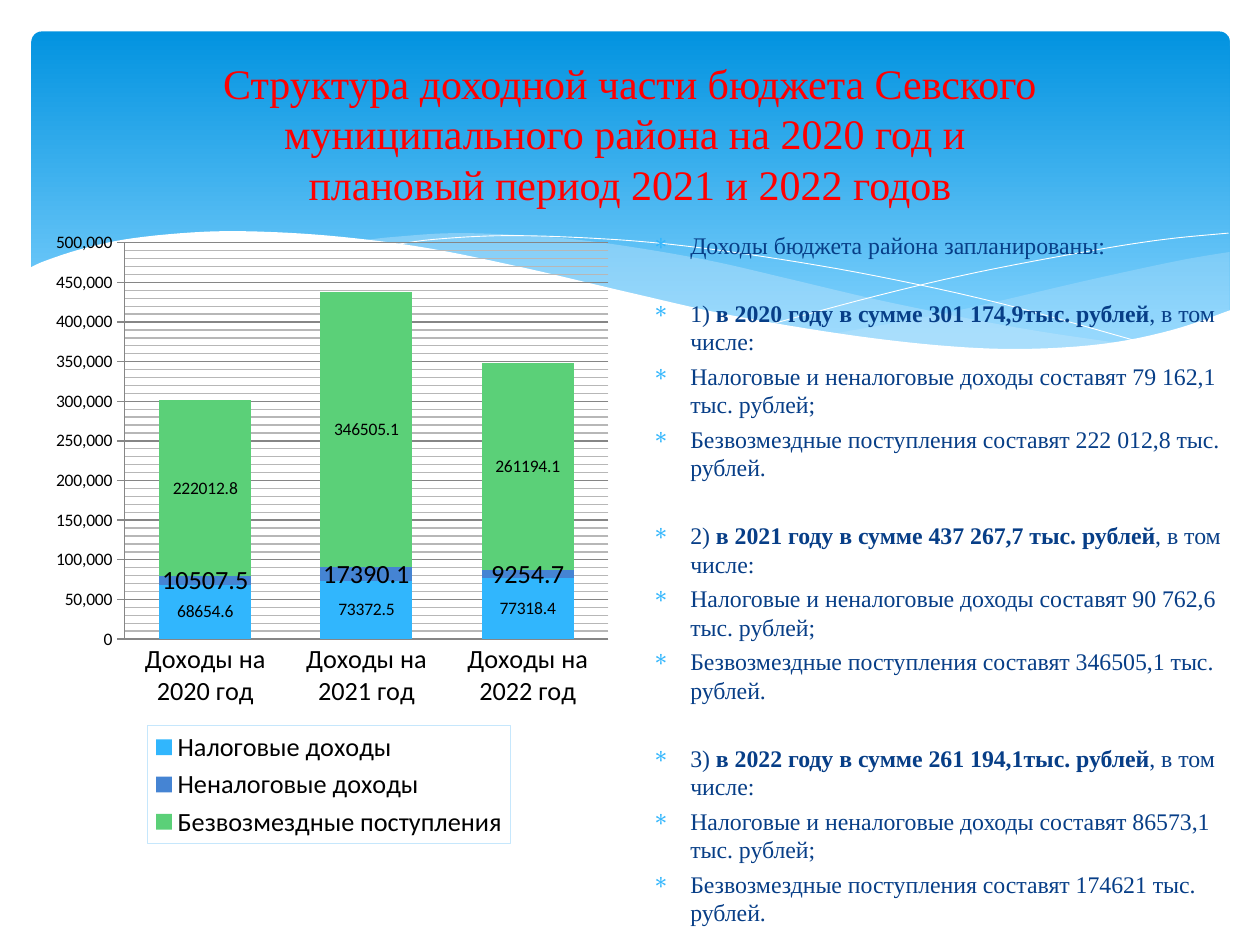
from lxml import etree
from pptx import Presentation
from pptx.chart.data import CategoryChartData
from pptx.dml.color import RGBColor
from pptx.enum.chart import XL_CHART_TYPE, XL_LEGEND_POSITION, XL_TICK_MARK
from pptx.enum.shapes import MSO_SHAPE
from pptx.enum.text import MSO_ANCHOR, PP_ALIGN
from pptx.oxml import parse_xml
from pptx.oxml.ns import nsdecls, qn
from pptx.util import Inches, Pt

STACKED = XL_CHART_TYPE.COLUMN_STACKED
BOTTOM = XL_LEGEND_POSITION.BOTTOM
CROSS, NO_TICK = XL_TICK_MARK.CROSS, XL_TICK_MARK.NONE
ROUNDED = MSO_SHAPE.ROUNDED_RECTANGLE
MIDDLE, CENTER = MSO_ANCHOR.MIDDLE, PP_ALIGN.CENTER

WIDTH, HEIGHT = 10, 7.5
SERIF, SANS = "Times New Roman", "Calibri"
WHITE, BLACK, RED, NAVY, SKY, PALE = "FFFFFF", "000000", "FF0000", "073E87", "31B6FD", "C6E7FC"
GRAY, LIGHT_GRAY = "868686", "B7B7B7"
BODY_SIZE, LINE_HEIGHT, PARAGRAPH_GAP = 13.6, 16, 3.3

TITLE = ["Структура доходной части бюджета Севского муниципального района на 2020 год и ",
         "плановый период 2021 и 2022 годов"]
INTRO = "Доходы бюджета района запланированы:"
YEARS = [
    ("в 2020 году в сумме 301 174,9тыс. рублей", "79 162,1", "222 012,8"),
    ("в 2021 году в сумме 437 267,7 тыс. рублей", "90 762,6", "346505,1"),
    ("в 2022 году в сумме 261 194,1тыс. рублей", "86573,1", "174621"),
]
CATEGORIES = [f"Доходы на {year} год" for year in (2020, 2021, 2022)]
SERIES = [
    ("Налоговые доходы", (68654.6, 73372.5, 77318.4), SKY, 10),
    ("Неналоговые доходы", (10507.5, 17390.1, 9254.7), "4584D3", 15),
    ("Безвозмездные поступления", (222012.8, 346505.1, 261194.1), "5BD078", 10),
]
PLOT_SHARES = {"x": 0.14, "y": 0.03, "w": 0.84, "h": 0.64}
LEGEND_SHARES = {"x": 0.18, "y": 0.81, "w": 0.63, "h": 0.19}

WAVES = [
    ([[(9.76, 2), (9.35, 2.07), (8.61, 2.23), (7.53, 2.48), (6.61, 2.65)],
      [(6.61, 2.65), (7.19, 2.72), (7.69, 2.77), (8.14, 2.78), (8.63, 2.75), (9.13, 2.67),
       (9.49, 2.57), (9.76, 2.47)]], PALE, 29),
    ([[(8.93, 2.73), (8.07, 2.6), (7.06, 2.4), (6.29, 2.22), (5.69, 2.08), (5.14, 1.98),
       (4.65, 1.91), (4.2, 1.87), (3.61, 1.85), (3.13, 1.88), (2.86, 1.91)],
      [(2.86, 1.91), (3.42, 1.99), (4.04, 2.11), (4.91, 2.32), (5.66, 2.48), (6.34, 2.61),
       (6.95, 2.7), (7.48, 2.76), (7.96, 2.78), (8.48, 2.77), (8.93, 2.73)]], PALE, 40),
    ([[(3.09, 1.95), (3.44, 1.9), (4.01, 1.87), (4.69, 1.89), (5.33, 1.94), (6.08, 2.04),
       (6.95, 2.19), (7.95, 2.41), (9.07, 2.72)]], None, 100),
    ([[(6.13, 2.57), (6.95, 2.35), (7.76, 2.16), (8.66, 1.99), (9.24, 1.9), (9.75, 1.85)]],
     None, 100),
    ([[(9.77, 2.46), (9.3, 2.62), (8.75, 2.73), (8.09, 2.77), (7.44, 2.74), (6.68, 2.65),
       (5.79, 2.5), (5.03, 2.33), (4.18, 2.13), (3.4, 1.97), (2.71, 1.88), (2.11, 1.84),
       (1.61, 1.84), (1.06, 1.89), (0.67, 1.97), (0.36, 2.07), (0.23, 2.13)],
      [(0.23, 3.29), (9.77, 3.29)]], WHITE, 100),
]


def color(value):
    return RGBColor.from_string(value)


def place(left, top, width, height):
    return [Inches(length) for length in (left, top, width, height)]


def smooth(points, steps=6):
    """Return points along a Catmull-Rom curve."""
    padded = [points[0], *points, points[-1]]
    curve = [points[0]]
    for a, b, c, d in zip(padded, padded[1:], padded[2:], padded[3:]):
        for t in (step / steps for step in range(1, steps + 1)):
            curve.append(tuple(
                (2 * q + (r - p) * t + (2 * p - 5 * q + 4 * r - s) * t ** 2
                 + (3 * q - p - 3 * r + s) * t ** 3) / 2
                for p, q, r, s in zip(a, b, c, d)))
    return curve


def style(font, size, value, name, bold=False):
    font.size, font.name, font.bold = Pt(size), name, bold
    font.color.rgb = color(value)


def add_span(para, text, size, value, bold=False):
    span = para.add_run()
    span.text = text
    style(span.font, size, value, SERIF, bold)


def add_banner(page):
    banner = page.shapes.add_shape(ROUNDED, *place(0.25, 0.25, 9.51, 2.7))
    banner.adjustments[0] = 0.03
    banner.shadow.inherit = False
    banner.line.fill.background()
    banner.fill.gradient()
    banner.fill.gradient_angle = 270
    for stop, value, position in zip(banner.fill.gradient_stops, ("0293E0", "83D3FE"), (0, 0.9)):
        stop.color.rgb, stop.position = color(value), position


def add_wave(page, runs, value, opacity):
    points = [tuple(map(Inches, point)) for run in runs for point in smooth(run)]
    builder = page.shapes.build_freeform(*points[0], scale=1.0)
    builder.add_line_segments(points[1:], close=value is not None)
    wave = builder.convert_to_shape()
    wave.shadow.inherit = False
    if value is None:
        wave.fill.background()
        wave.line.color.rgb, wave.line.width = color(WHITE), Pt(0.5)
        return
    wave.line.fill.background()
    wave.fill.solid()
    wave.fill.fore_color.rgb = color(value)
    tint = wave.element.spPr.find(f"{qn('a:solidFill')}/{qn('a:srgbClr')}")
    etree.SubElement(tint, qn("a:alpha"), val=str(opacity * 1000))


def add_title(page):
    title = page.shapes.title
    title.left, title.top, title.width, title.height = place(0.5, 0.37, 9, 1.37)
    title.element.getparent().append(title.element)
    title.text_frame.vertical_anchor = MIDDLE
    para = title.text_frame.paragraphs[0]
    para.alignment = CENTER
    add_span(para, TITLE[0], 24, RED)
    para.add_line_break()
    add_span(para, TITLE[1], 24, RED)


def line_xml(value):
    return (f'<a:ln w="9525"><a:solidFill><a:srgbClr val="{value}"/></a:solidFill></a:ln>')


def layout_xml(shares, inner=False):
    target = '<c:layoutTarget val="inner"/>' if inner else ""
    modes = "".join(f'<c:{side}Mode val="edge"/>' for side in "xy")
    sizes = "".join(f'<c:{key} val="{share}"/>' for key, share in shares.items())
    return parse_xml(f'<c:layout {nsdecls("c")}><c:manualLayout>{target}{modes}{sizes}'
                     '</c:manualLayout></c:layout>')


def add_income_chart(page):
    data = CategoryChartData(number_format="General")
    data.categories = CATEGORIES
    for name, values, _, _ in SERIES:
        data.add_series(name, values)
    chart = page.shapes.add_chart(STACKED, *place(0.35, 1.78, 4.57, 4.92), data).chart
    style(chart.font, 18, BLACK, SANS)
    chart.has_title = False
    plot = chart.plots[0]
    plot.gap_width, plot.overlap, plot.vary_by_categories = 75, 100, False
    for series, (_, _, value, size) in zip(plot.series, SERIES):
        series.format.fill.solid()
        series.format.fill.fore_color.rgb = color(value)
        series.data_labels.show_value = True
        style(series.data_labels.font, size, BLACK, SANS)

    names, amounts = chart.category_axis, chart.value_axis
    names.major_tick_mark = NO_TICK
    amounts.major_tick_mark = CROSS
    amounts.minimum_scale, amounts.maximum_scale = 0, 500000
    amounts.major_unit, amounts.minor_unit = 50000, 10000
    amounts.has_major_gridlines = amounts.has_minor_gridlines = True
    amounts.tick_labels.number_format = "#,##0"
    amounts.tick_labels.number_format_is_linked = False
    style(names.tick_labels.font, 15, BLACK, SANS)
    style(amounts.tick_labels.font, 10, BLACK, SANS)
    for part in (names, amounts, amounts.major_gridlines):
        part.format.line.color.rgb, part.format.line.width = color(GRAY), Pt(0.75)
    chart.element.find(f".//{qn('c:minorGridlines')}").append(parse_xml(
        f'<c:spPr {nsdecls("c", "a")}>{line_xml(LIGHT_GRAY)}</c:spPr>'))

    chart.has_legend = True
    legend = chart.legend
    legend.position, legend.include_in_layout = BOTTOM, False
    style(legend.font, 15, BLACK, SANS)
    area = chart.element.find(f".//{qn('c:plotArea')}")
    frame = chart.element.find(f".//{qn('c:legend')}")
    for holder in (area, frame):
        for old in holder.findall(qn("c:layout")):
            holder.remove(old)
    area.insert(0, layout_xml(PLOT_SHARES, inner=True))
    frame.find(qn("c:legendPos")).addnext(layout_xml(LEGEND_SHARES))
    frame.find(qn("c:overlay")).addnext(parse_xml(
        f'<c:spPr {nsdecls("c", "a")}><a:solidFill><a:srgbClr val="{WHITE}"/></a:solidFill>'
        f'{line_xml(PALE)}</c:spPr>'))


def add_bullets(page):
    frame = page.shapes.add_textbox(*place(5.08, 1.78, 4.72, 4.92)).text_frame
    frame.word_wrap = True
    items = [(0, [(INTRO, False)])]
    for number, (total, own, grants) in enumerate(YEARS, 1):
        items += [
            (2 * PARAGRAPH_GAP + LINE_HEIGHT,
             [(f"{number}) ", False), (total, True), (", в том числе:", False)]),
            (PARAGRAPH_GAP, [(f"Налоговые и неналоговые доходы составят {own} тыс. рублей;", False)]),
            (PARAGRAPH_GAP, [(f"Безвозмездные поступления составят {grants} тыс. рублей.", False)]),
        ]
    for index, (gap, spans) in enumerate(items):
        para = frame.add_paragraph() if index else frame.paragraphs[0]
        para.space_before = Pt(gap)
        for text, bold in spans:
            add_span(para, text, BODY_SIZE, NAVY, bold)
        properties = para._p.get_or_add_pPr()
        properties.set("marL", str(Inches(0.3)))
        properties.set("indent", str(Inches(-0.3)))
        tint = etree.SubElement(properties, qn("a:buClr"))
        etree.SubElement(tint, qn("a:srgbClr"), val=SKY)
        etree.SubElement(properties, qn("a:buChar"), char="∗")


deck = Presentation()
deck.slide_width, deck.slide_height = Inches(WIDTH), Inches(HEIGHT)
page = deck.slides.add_slide(deck.slide_layouts[5])
add_banner(page)
for wave in WAVES:
    add_wave(page, *wave)
add_title(page)
add_income_chart(page)
add_bullets(page)
deck.save("out.pptx")
